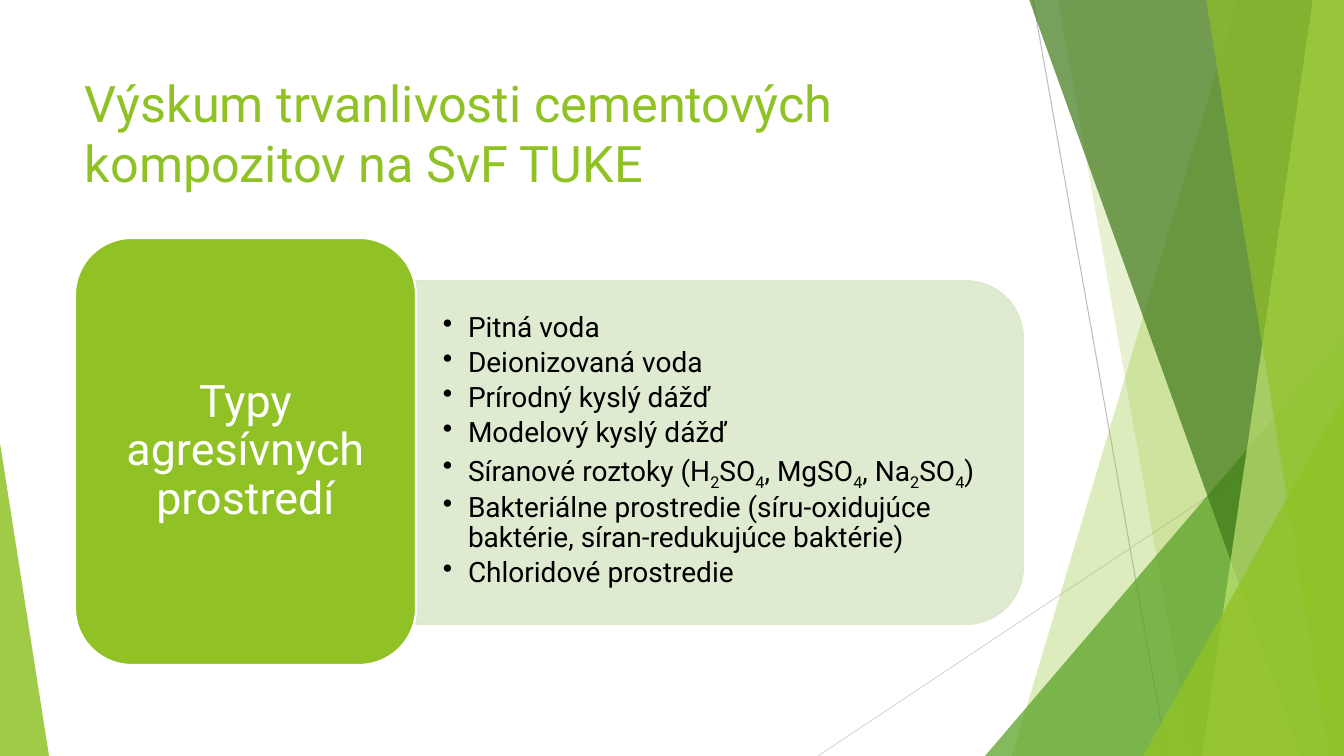
from itertools import groupby

from lxml.etree import SubElement
from pptx import Presentation
from pptx.dml.color import RGBColor
from pptx.enum.shapes import MSO_CONNECTOR, MSO_SHAPE as SHAPE
from pptx.enum.text import MSO_ANCHOR as ANCHOR, PP_ALIGN as ALIGN
from pptx.oxml.ns import qn
from pptx.util import Pt

PX = 12192000 / 1344
WIDTH, HEIGHT = 1344, 756
GREEN, PALE = "90C226", "DBE9CD"


def paint(fill, color, owner=None, alpha=100):
    fill.solid()
    fill.fore_color.rgb = RGBColor.from_string(color)
    if owner is not None:
        for tint in owner.element.xpath("./p:spPr//a:srgbClr[not(a:alpha)]"):
            SubElement(tint, qn("a:alpha"), val=str(alpha * 1000))


def write(frame, text, size, color, inset=(10, 5), anchor=ANCHOR.TOP,
          align=ALIGN.LEFT, leading=None, after=0, hang=0):
    frame.word_wrap = True
    frame.vertical_anchor = anchor
    frame.margin_left = frame.margin_right = round(inset[0] * PX)
    frame.margin_top = frame.margin_bottom = round(inset[1] * PX)
    for index, line in enumerate(text.split("\n")):
        paragraph = frame.add_paragraph() if index else frame.paragraphs[0]
        paragraph.alignment = align
        paragraph.line_spacing = leading
        paragraph.space_after = Pt(after)
        if hang:
            properties = paragraph._p.get_or_add_pPr()
            properties.set("marL", str(round(hang * PX)))
            properties.set("indent", str(round(-hang * PX)))
            SubElement(properties, qn("a:buChar"), char="•")
        for is_subscript, letters in groupby(line, str.isdigit):
            run = paragraph.add_run()
            run.text = "".join(letters)
            run.font.name = "Roboto"
            run.font.size = Pt(size)
            paint(run.font.fill, color)
            if is_subscript:
                run._r.get_or_add_rPr().set("baseline", "-25000")


deck = Presentation()
deck.slide_width, deck.slide_height = round(WIDTH * PX), round(HEIGHT * PX)
slide = deck.slides.add_slide(deck.slide_layouts[6])
shapes = slide.shapes
paint(slide.background.fill, "FFFFFF")

for ends, color in [((1033, 0, 1167, 756), "BFBFBF"), ((1344, 406, 818, 756), "D9D9D9")]:
    ray = shapes.add_connector(MSO_CONNECTOR.STRAIGHT, *(round(end * PX) for end in ends))
    ray.line.width = Pt(0.75)
    paint(ray.line.fill, color)
    SubElement(ray.element.spPr, qn("a:effectLst"))

slabs_and_wedges = [
    ("slab", (1238, 1012), GREEN, 30),
    ("slab", (1058, 1192), GREEN, 20),
    ("wedge", (985, 336, 359, 420, 1), "54A021", 72),
    ("slab", (1029, 1301), "3F7819", 70),
    ("slab", (1313, 1202), "C0E474", 70),
    ("slab", (1206, 1329), GREEN, 65),
    ("wedge", (1143, 396, 201, 360, 1), GREEN, 80),
    ("wedge", (0, 443, 49, 313, 0), GREEN, 85),
]
for kind, layout, color, alpha in slabs_and_wedges:
    if kind == "slab":
        top, bottom = layout
        outline = shapes.build_freeform(top, -1, scale=PX)
        outline.add_line_segments([(WIDTH, -1), (WIDTH, HEIGHT), (bottom, HEIGHT)])
        facet = outline.convert_to_shape()
    else:
        *box, apex = layout
        facet = shapes.add_shape(SHAPE.ISOSCELES_TRIANGLE, *(round(side * PX) for side in box))
        facet.adjustments[0] = apex
    facet.shadow.inherit = False
    facet.line.fill.background()
    paint(facet.fill, color, facet, alpha)

title = shapes.add_textbox(*(round(side * PX) for side in (75, 67, 948, 145)))
write(title.text_frame, "Výskum trvanlivosti cementových kompozitov na SvF TUKE", 36, GREEN)

panel = shapes.add_shape(SHAPE.ROUND_2_SAME_RECTANGLE,
                         *(round(side * PX) for side in (548, 149, 343, 607)))
panel.rotation = 90
panel.shadow.inherit = False
panel.line.width = Pt(1.5)
paint(panel.fill, PALE, panel, 90)
paint(panel.line.fill, PALE, panel, 90)

environments = shapes.add_textbox(*(round(side * PX) for side in (416, 297, 590, 308)))
write(environments.text_frame, "\n".join([
    "Pitná voda",
    "Deionizovaná voda",
    "Prírodný kyslý dážď",
    "Modelový kyslý dážď",
    "Síranové roztoky (H2SO4, MgSO4, Na2SO4)",
    "Bakteriálne prostredie (síru-oxidujúce baktérie, síran-redukujúce baktérie)",
    "Chloridové prostredie",
]), 20, "000000", inset=(27, 14), anchor=ANCHOR.MIDDLE, leading=0.9, after=3.5, hang=25)

category = shapes.add_shape(SHAPE.ROUNDED_RECTANGLE,
                            *(round(side * PX) for side in (75, 238, 341, 427)))
category.shadow.inherit = False
category.line.width = Pt(1.5)
paint(category.fill, GREEN)
paint(category.line.fill, "FFFFFF")
write(category.text_frame, "Typy agresívnych prostredí", 32, "FFFFFF", inset=(13, 7),
      anchor=ANCHOR.MIDDLE, align=ALIGN.CENTER, leading=0.9)

deck.save("out.pptx")
